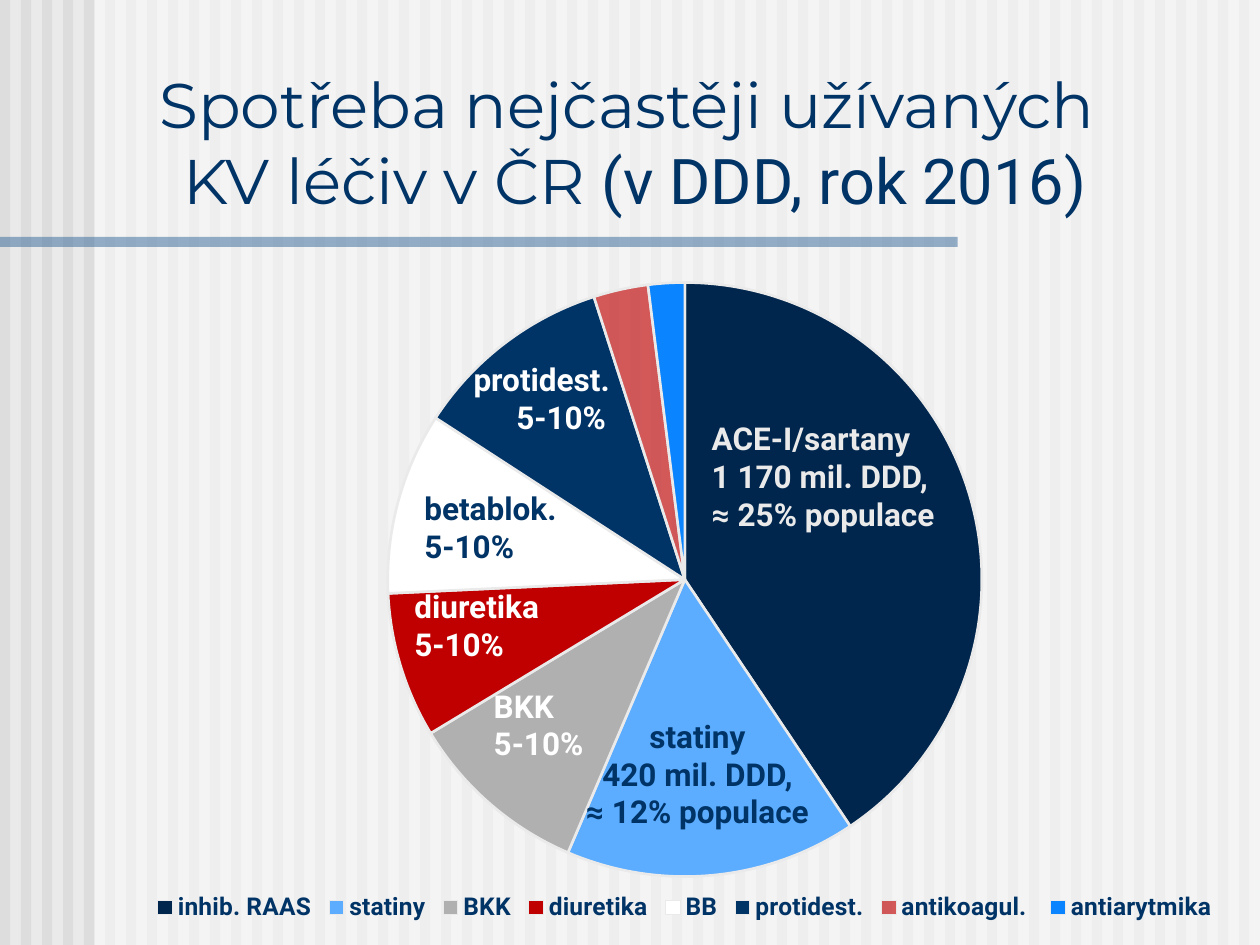
from dataclasses import dataclass

from lxml import etree
from pptx import Presentation
from pptx.chart.data import CategoryChartData
from pptx.dml.color import RGBColor
from pptx.enum.chart import XL_CHART_TYPE, XL_LEGEND_POSITION
from pptx.enum.shapes import MSO_SHAPE
from pptx.enum.text import MSO_ANCHOR, MSO_AUTO_SIZE, PP_ALIGN
from pptx.oxml.ns import qn
from pptx.util import Inches, Pt

PIE = XL_CHART_TYPE.PIE
BOTTOM_LEGEND = XL_LEGEND_POSITION.BOTTOM
RECTANGLE = MSO_SHAPE.RECTANGLE
ANCHOR_BOTTOM = MSO_ANCHOR.BOTTOM
FIXED, GROW = MSO_AUTO_SIZE.NONE, MSO_AUTO_SIZE.SHAPE_TO_FIT_TEXT
LEFT, CENTER = PP_ALIGN.LEFT, PP_ALIGN.CENTER


@dataclass(frozen=True)
class Theme:
    """Colours, fonts and type sizes of the slide."""
    paper: RGBColor = RGBColor.from_string("EAEAEA")
    stripe: RGBColor = RGBColor.from_string("DDDDDD")
    white: RGBColor = RGBColor.from_string("FFFFFF")
    navy: RGBColor = RGBColor.from_string("003366")
    dark_navy: RGBColor = RGBColor.from_string("00264D")
    rule: RGBColor = RGBColor.from_string("336699")
    sky: RGBColor = RGBColor.from_string("5CADFF")
    azure: RGBColor = RGBColor.from_string("0A85FF")
    grey: RGBColor = RGBColor.from_string("B0B0B0")
    red: RGBColor = RGBColor.from_string("C00000")
    heading_font: str = "Montserrat"
    body_font: str = "Roboto"
    title_size: Pt = Pt(36)
    label_size: Pt = Pt(18)
    legend_size: Pt = Pt(14)


THEME = Theme()

DRUGS = [
    ("inhib. RAAS", 41, THEME.dark_navy, 100),
    ("statiny", 16, THEME.sky, 100),
    ("BKK", 10, THEME.grey, 100),
    ("diuretika", 8, THEME.red, 100),
    ("BB", 10, THEME.white, 100),
    ("protidest.", 11, THEME.navy, 100),
    ("antikoagul. ", 3, THEME.red, 63),
    ("antiarytmika", 2, THEME.azure, 100),
]

SHARE = "5-10%"
SLICE_LABELS = [
    ((5.55, 3.28, 2.09, 1.01), THEME.paper, False,
     [("ACE-I/sartany", LEFT), ("1 170 mil. DDD,", LEFT), ("≈ 25% populace", LEFT)]),
    ((4.49, 5.64, 2.09, 1.01), THEME.navy, True,
     [("statiny", CENTER), ("420 mil. DDD,", CENTER), ("≈ 12% populace", CENTER)]),
    ((3.82, 5.4, 1.02, 0.71), THEME.white, True, [("BKK", LEFT), (SHARE, LEFT)]),
    ((3.19, 4.61, 1.5, 0.71), THEME.white, True, [("diuretika", LEFT), (SHARE, LEFT)]),
    ((3.27, 3.83, 1.57, 0.71), THEME.navy, True, [("betablok.", LEFT), (SHARE, LEFT)]),
    ((3.66, 2.81, 1.65, 0.71), THEME.white, True,
     [("protidest.", LEFT), (SHARE + " ", CENTER)]),
]


def inches(box):
    """Turn a box of numbers into lengths."""
    return [Inches(length) for length in box]


def paint(fill, color, opacity=100):
    """Fill with a colour at an opacity in percent."""
    fill.solid()
    fill.fore_color.rgb = color
    if opacity < 100:
        solid = next(fill._xPr.iter(qn("a:srgbClr")))
        etree.SubElement(solid, qn("a:alpha"), val=str(opacity * 1000))


def style(font, size, color, face, bold=False):
    """Set size, colour, face and weight of a font."""
    font.size, font.name, font.bold = size, face, bold
    font.color.rgb = color


def add_panel(slide, box, color, opacity=100):
    """Add a plain borderless rectangle."""
    panel = slide.shapes.add_shape(RECTANGLE, *inches(box))
    panel.shadow.inherit = False
    panel.line.fill.background()
    paint(panel.fill, color, opacity)


def add_backdrop(slide, box):
    """Draw the striped paper, its white veil and the title rule."""
    left, top, width, height = box
    paint(slide.background.fill, THEME.paper)
    for stripe in range(60):
        add_panel(slide, (left + stripe * width / 60, top, 0.08, height), THEME.stripe)
    add_panel(slide, (left + 0.75, top, width - 0.75, height), THEME.white, 50)
    add_panel(slide, (left, top + 1.88, 7.6, 0.08), THEME.rule, 50)


def add_title(slide, box):
    """Place the title in front of the backdrop and write it."""
    title = slide.shapes.title
    slide.shapes._spTree.append(title._element)
    title.left, title.top, title.width, title.height = inches(box)
    frame = title.text_frame
    frame.word_wrap, frame.auto_size = True, FIXED
    frame.vertical_anchor = ANCHOR_BOTTOM
    heading = frame.paragraphs[0]
    heading.alignment = CENTER
    for text, face in [("Spotřeba nejčastěji užívaných ", THEME.heading_font),
                       ("KV léčiv v ČR ", THEME.heading_font),
                       ("(v DDD, rok 2016)", THEME.body_font)]:
        if text.startswith("KV"):
            heading.add_line_break()
        run = heading.add_run()
        run.text = text
        style(run.font, THEME.title_size, THEME.navy, face)


def place_in_chart(parent, successor, fractions, inner=False):
    """Give a plot area or legend a manual layout in chart fractions."""
    for old in parent.findall(qn("c:layout")):
        parent.remove(old)
    layout = etree.Element(qn("c:layout"))
    manual = etree.SubElement(layout, qn("c:manualLayout"))
    settings = [("layoutTarget", "inner")] if inner else []
    settings += [("xMode", "edge"), ("yMode", "edge")]
    settings += zip("xywh", map(str, fractions))
    for tag, value in settings:
        etree.SubElement(manual, qn("c:" + tag), val=value)
    parent.find(qn("c:" + successor)).addprevious(layout)


def add_consumption_pie(slide, box):
    """Draw the pie of consumption with its legend."""
    data = CategoryChartData()
    data.categories = [name for name, *_ in DRUGS]
    data.add_series("Series 1", [amount for _, amount, *_ in DRUGS])
    chart = slide.shapes.add_chart(PIE, *inches(box), data).chart
    style(chart.font, THEME.legend_size, THEME.navy, THEME.body_font)
    chart.has_title = False
    chart.has_legend = True
    chart.legend.position = BOTTOM_LEGEND
    chart.legend.include_in_layout = False
    style(chart.legend.font, THEME.legend_size, THEME.navy, THEME.body_font, True)
    pie = chart.plots[0]
    pie.vary_by_categories = True
    for index, (_, _, color, opacity) in enumerate(DRUGS):
        portion = pie.series[0].points[index].format
        paint(portion.fill, color, opacity)
        portion.line.color.rgb = THEME.paper
        portion.line.width = Pt(1.5)
    plot_area = chart._chartSpace.chart.plotArea
    place_in_chart(plot_area, "pieChart", (0.23, 0.03, 0.54, 0.87), True)
    place_in_chart(chart.legend._element, "overlay", (0.02, 0.91, 0.96, 0.07))


def add_slice_label(slide, box, color, wrap, lines):
    """Write the lines of one label over its slice."""
    label = slide.shapes.add_textbox(*inches(box)).text_frame
    label.word_wrap, label.auto_size = wrap, GROW
    for index, (text, alignment) in enumerate(lines):
        line = label.add_paragraph() if index else label.paragraphs[0]
        line.alignment = alignment
        run = line.add_run()
        run.text = text
        style(run.font, THEME.label_size, color, THEME.body_font, True)


def main():
    """Build the slide and save it."""
    deck = Presentation()
    deck.slide_width, deck.slide_height = Inches(10), Inches(7.5)
    slide = deck.slides.add_slide(deck.slide_layouts.get_by_name("Title Only"))
    add_backdrop(slide, (0, 0, 10, 7.5))
    add_title(slide, (0.2, 0.58, 9.68, 1.19))
    add_consumption_pie(slide, (1, 2.08, 8.87, 5.42))
    for label in SLICE_LABELS:
        add_slice_label(slide, *label)
    deck.save("out.pptx")


if __name__ == "__main__":
    main()
